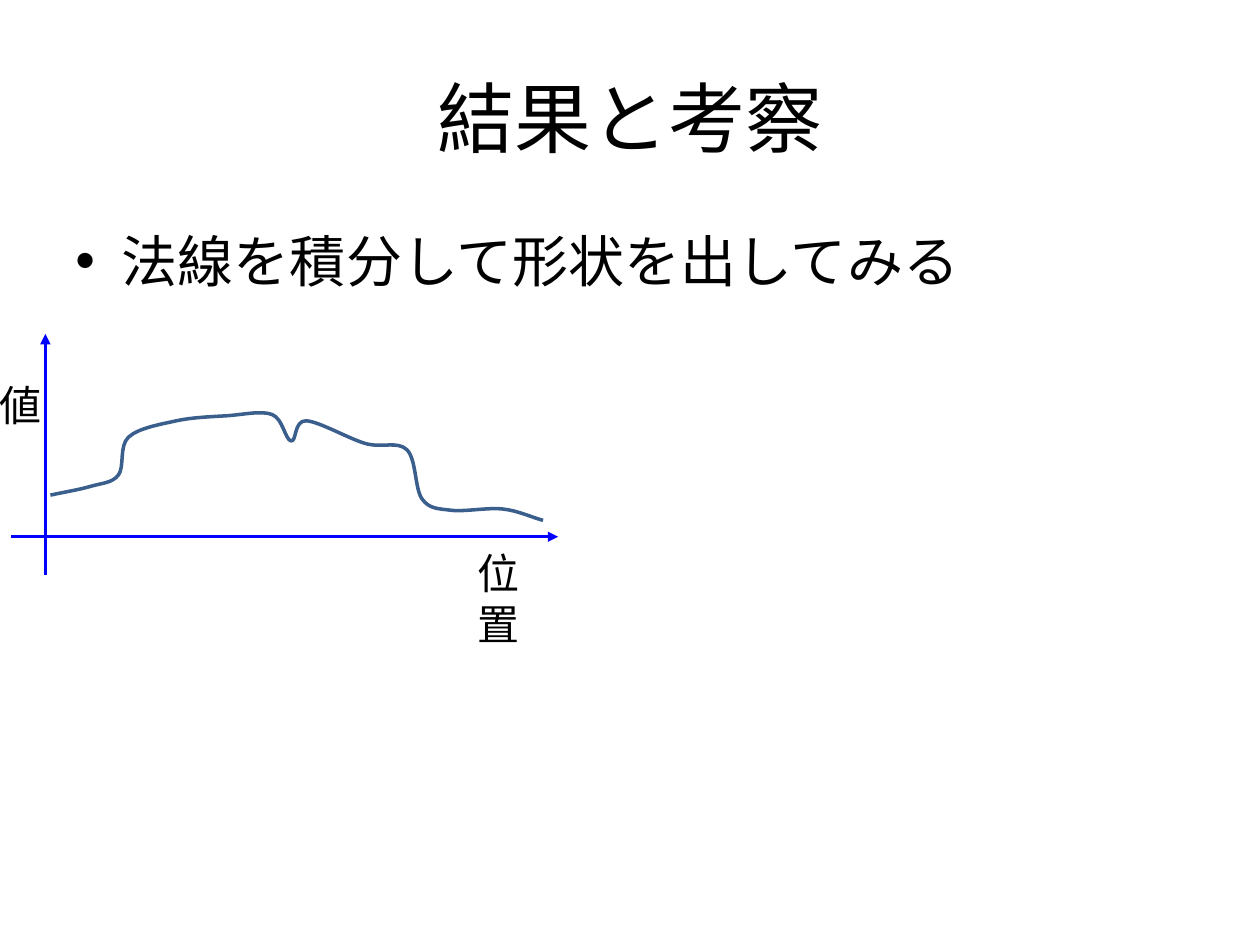
from dataclasses import dataclass

import pptx
import pptx.dml.color
import pptx.enum.shapes
import pptx.enum.text
import pptx.oxml
import pptx.oxml.ns
import pptx.util
from pptx.util import Inches

COLORS = {"text": "000000", "axis": "0000FF", "profile": "3A5F8C"}
FONT = "Calibri"

Point = tuple[float, float]


@dataclass
class Axis:
    start: Point
    end: Point


@dataclass
class Label:
    text: str
    left: float
    top: float
    width: float
    height: float
    size: int


TITLE = Label("結果と考察", 0.5, 0.3, 9, 1.25, 44)
BULLET = Label("法線を積分して形状を出してみる", 0.5, 1.75, 9, 4.95, 32)
AXES = [Axis((0.36, 4.56), (0.36, 2.65)), Axis((0.09, 4.26), (4.43, 4.26))]
AXIS_LABELS = [
    Label("値", -0.1, 2.96, 0.27, 0.34, 24),
    Label("位置", 3.69, 4.3, 0.44, 0.34, 24),
]
PROFILE_KNOTS: list[Point] = [
    (0.4, 3.93), (0.72, 3.86), (0.94, 3.77), (1.02, 3.47), (1.4, 3.34),
    (1.8, 3.3), (2.16, 3.29), (2.31, 3.5), (2.43, 3.34), (2.9, 3.52),
    (3.23, 3.57), (3.35, 3.96), (3.58, 4.05), (3.99, 4.04), (4.31, 4.13),
]


def rgb(name: str) -> pptx.dml.color.RGBColor:
    return pptx.dml.color.RGBColor.from_string(COLORS[name])


def make_element(tag: str, **attributes):
    element = pptx.oxml.parse_xml(f"<a:{tag} {pptx.oxml.ns.nsdecls('a')}/>")
    for name, value in attributes.items():
        element.set(name, str(value))
    return element


def write(shape, label: Label) -> None:
    """Place the shape and format its single paragraph."""
    for side in ("left", "top", "width", "height"):
        setattr(shape, side, Inches(getattr(label, side)))
    shape.text_frame.word_wrap = True
    run = shape.text_frame.paragraphs[0].add_run()
    run.text = label.text
    font_format = {"name": FONT, "size": pptx.util.Pt(label.size), "bold": False}
    for attribute, value in font_format.items():
        setattr(run.font, attribute, value)
    run.font.color.rgb = rgb("text")


def add_label(shapes, label: Label):
    box = shapes.add_textbox(0, 0, 0, 0)
    write(box, label)
    return box


def add_bullet(shapes, label: Label) -> None:
    box = add_label(shapes, label)
    properties = box.text_frame.paragraphs[0]._p.get_or_add_pPr()
    indent = Inches(0.37)
    properties.set("marL", str(indent))
    properties.set("indent", str(-indent))
    properties.append(make_element("buFont", typeface="Arial"))
    properties.append(make_element("buChar", char="•"))


def add_axis(shapes, axis: Axis) -> None:
    line = shapes.add_connector(
        pptx.enum.shapes.MSO_CONNECTOR.STRAIGHT,
        *(Inches(value) for value in axis.start + axis.end),
    )
    line.line.color.rgb = rgb("axis")
    line.line.width = pptx.util.Pt(1.5)
    line.line._get_or_add_ln().append(make_element("tailEnd", type="triangle"))
    line._element.spPr.append(make_element("effectLst"))


def round_corners(curve) -> None:
    """Turn the straight segments into Bezier curves of a Catmull-Rom spline."""
    find = curve._element.spPr.findall
    corners = find(".//" + pptx.oxml.ns.qn("a:pt"))
    knots = [(int(pt.get("x")), int(pt.get("y"))) for pt in corners]

    def reflect(end: Point, inner: Point) -> Point:
        return 2 * end[0] - inner[0], 2 * end[1] - inner[1]

    padded = [reflect(*knots[:2]), *knots, reflect(knots[-1], knots[-2])]
    segments = find(".//" + pptx.oxml.ns.qn("a:lnTo"))
    for segment, a, b, c, d in zip(segments, padded, padded[1:], padded[2:], padded[3:]):
        leave = [q + (r - p) / 6 for p, q, r in zip(a, b, c)]
        arrive = [r - (s - q) / 6 for q, r, s in zip(b, c, d)]
        bezier = make_element("cubicBezTo")
        for x, y in (leave, arrive, c):
            bezier.append(make_element("pt", x=round(x), y=round(y)))
        segment.getparent().replace(segment, bezier)


def add_profile(shapes, knots: list[Point]) -> None:
    start, *rest = [(Inches(x), Inches(y)) for x, y in knots]
    builder = shapes.build_freeform(*start)
    builder.add_line_segments(rest, close=False)
    curve = builder.convert_to_shape()
    round_corners(curve)
    curve.shadow.inherit = False
    curve.fill.background()
    curve.line.color.rgb = rgb("profile")
    curve.line.width = pptx.util.Pt(2)


def main() -> None:
    deck = pptx.Presentation()
    deck.slide_width, deck.slide_height = Inches(10), Inches(7.5)
    slide = deck.slides.add_slide(deck.slide_layouts.get_by_name("Title Only"))

    title = slide.shapes.title
    write(title, TITLE)
    title.text_frame.vertical_anchor = pptx.enum.text.MSO_ANCHOR.MIDDLE
    title.text_frame.paragraphs[0].alignment = pptx.enum.text.PP_ALIGN.CENTER
    add_bullet(slide.shapes, BULLET)

    graph = slide.shapes.add_group_shape().shapes
    for axis in AXES:
        add_axis(graph, axis)
    for label in AXIS_LABELS:
        add_label(graph, label)
    add_profile(graph, PROFILE_KNOTS)

    deck.save("out.pptx")


if __name__ == "__main__":
    main()
